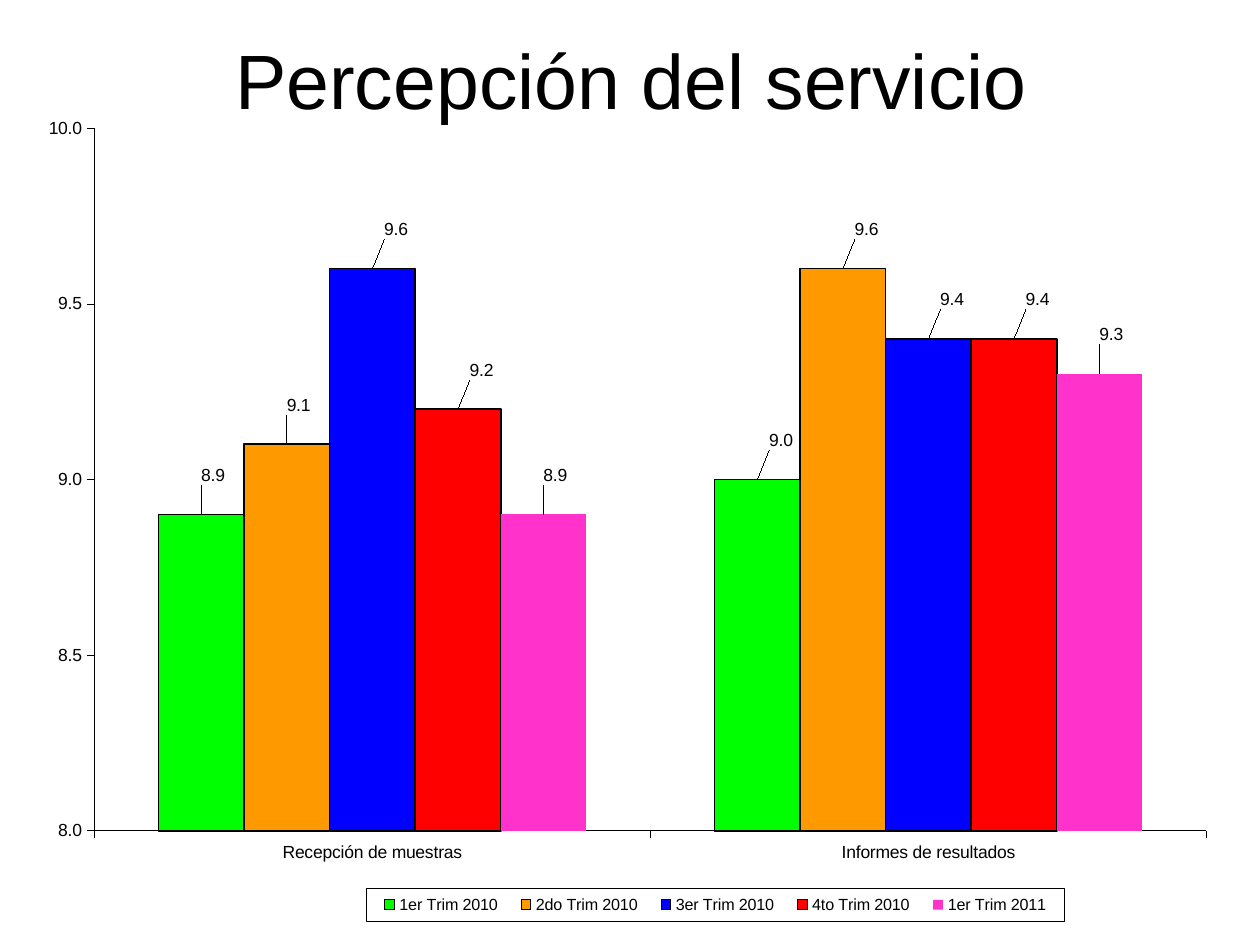
from lxml.etree import SubElement, fromstring
from pptx import Presentation
from pptx.chart.data import CategoryChartData
from pptx.dml.color import RGBColor
from pptx.enum.chart import XL_CHART_TYPE, XL_LABEL_POSITION, XL_LEGEND_POSITION, XL_TICK_LABEL_POSITION, XL_TICK_MARK
from pptx.enum.text import MSO_ANCHOR, PP_ALIGN
from pptx.oxml.ns import nsdecls, qn
from pptx.util import Cm, Pt

COLORS = {
    "black": "000000",
    "white": "FFFFFF",
    "green": "00FF00",
    "orange": "FF9900",
    "blue": "0000FF",
    "red": "FF0000",
    "pink": "FF33CC",
}
CATEGORIES = ["Recepción de muestras", "Informes de resultados"]
QUARTERS = [
    ("1er Trim 2010", "green", (8.9, 9.0), (0.01, 0.02)),
    ("2do Trim 2010", "orange", (9.1, 9.6), (0.01, 0.02)),
    ("3er Trim 2010", "blue", (9.6, 9.4), (0.02, 0.02)),
    ("4to Trim 2010", "red", (9.2, 9.4), (0.02, 0.02)),
    ("1er Trim 2011", "pink", (8.9, 9.3), (0.01, 0.01)),
]
LABEL_RISE = -0.03
NUMBER_FORMAT = {"number_format": "0.0", "number_format_is_linked": False}


def color(name):
    return RGBColor.from_string(COLORS[name])


def apply(target, values):
    for name, value in values.items():
        setattr(target, name, value)


def format_font(font, size):
    apply(font, {"name": "Arial", "size": Pt(size), "bold": False})
    font.color.rgb = color("black")


def format_line(line, width):
    line.color.rgb = color("black")
    line.width = Pt(width)


def place(parent, index, target, **lengths):
    for existing in parent.findall(qn("c:layout")):
        parent.remove(existing)
    layout = fromstring(f"<c:layout {nsdecls('c')}/>")
    parent.insert(index, layout)
    manual = SubElement(layout, qn("c:manualLayout"))
    if target:
        SubElement(manual, qn("c:layoutTarget"), val=target)
    if "w" in lengths:
        for mode in ("xMode", "yMode"):
            SubElement(manual, qn(f"c:{mode}"), val="edge")
    for name, value in lengths.items():
        SubElement(manual, qn(f"c:{name}"), val=str(value))


def add_title(slide, left, top, width, height):
    shape = slide.shapes.add_textbox(left, top, width, height)
    shape.fill.solid()
    shape.fill.fore_color.rgb = color("white")
    frame = shape.text_frame
    apply(frame, {"word_wrap": True, "vertical_anchor": MSO_ANCHOR.MIDDLE})
    paragraph = frame.paragraphs[0]
    apply(paragraph, {"text": "Percepción del servicio", "alignment": PP_ALIGN.CENTER})
    format_font(paragraph.font, 44)


def format_axes(chart):
    for axis in (chart.category_axis, chart.value_axis):
        apply(axis, {
            "has_major_gridlines": False,
            "major_tick_mark": XL_TICK_MARK.OUTSIDE,
            "minor_tick_mark": XL_TICK_MARK.NONE,
        })
        format_line(axis.format.line, 0.25)
        format_font(axis.tick_labels.font, 10)
    chart.category_axis.tick_label_position = XL_TICK_LABEL_POSITION.LOW
    apply(chart.value_axis, {"minimum_scale": 8, "maximum_scale": 10, "major_unit": 0.5})
    apply(chart.value_axis.tick_labels, NUMBER_FORMAT)


def format_series(series, fill, shifts):
    series.format.fill.solid()
    series.format.fill.fore_color.rgb = color(fill)
    if fill == "pink":
        series.format.line.fill.background()
    else:
        format_line(series.format.line, 1)
    labels = series.data_labels
    apply(labels, {"show_value": True, "position": XL_LABEL_POSITION.OUTSIDE_END, **NUMBER_FORMAT})
    format_font(labels.font, 10)
    for index, shift in enumerate(shifts):
        label = series.points[index].data_label
        label.position = XL_LABEL_POSITION.OUTSIDE_END
        format_font(label.font, 10)
    for element, shift in zip(labels._element.findall(qn("c:dLbl")), shifts):
        place(element, 1, None, x=shift, y=LABEL_RISE)
        number_format = fromstring(f'<c:numFmt {nsdecls("c")} formatCode="0.0" sourceLinked="0"/>')
        element.insert(2, number_format)


def format_legend(chart):
    chart.has_legend = True
    legend = chart.legend
    apply(legend, {"position": XL_LEGEND_POSITION.BOTTOM, "include_in_layout": False})
    format_font(legend.font, 9.2)
    place(legend._element, 1, None, x=0.28, y=0.96, w=0.59, h=0.04)
    border = fromstring(
        f'<c:spPr {nsdecls("c", "a")}><a:ln w="3175"><a:solidFill>'
        f'<a:srgbClr val="{COLORS["black"]}"/></a:solidFill></a:ln></c:spPr>'
    )
    legend._element.find(qn("c:txPr")).addprevious(border)


def add_perception_chart(slide, left, top, width, height):
    data = CategoryChartData(number_format="0.0")
    data.categories = CATEGORIES
    for name, fill, values, shifts in QUARTERS:
        data.add_series(name, values)
    chart = slide.shapes.add_chart(
        XL_CHART_TYPE.COLUMN_CLUSTERED, left, top, width, height, data
    ).chart
    chart.has_title = False
    format_font(chart.font, 10)
    plot = chart.plots[0]
    apply(plot, {"gap_width": 150, "overlap": 0, "vary_by_categories": False})
    format_axes(chart)
    for series, (name, fill, values, shifts) in zip(plot.series, QUARTERS):
        format_series(series, fill, shifts)
    format_legend(chart)
    plot_area = chart._chartSpace.find(".//" + qn("c:plotArea"))
    place(plot_area, 0, "inner", x=0.05, y=0.015, w=0.94, h=0.873)


def main():
    presentation = Presentation()
    apply(presentation, {"slide_width": Cm(25.4), "slide_height": Cm(19.05)})
    slide = presentation.slides.add_slide(presentation.slide_layouts[6])
    add_title(slide, Cm(1.3), Cm(0), Cm(22.86), Cm(3.18))
    add_perception_chart(slide, Cm(0.71), Cm(2.34), Cm(23.85), Cm(16.23))
    presentation.save("out.pptx")


if __name__ == "__main__":
    main()
